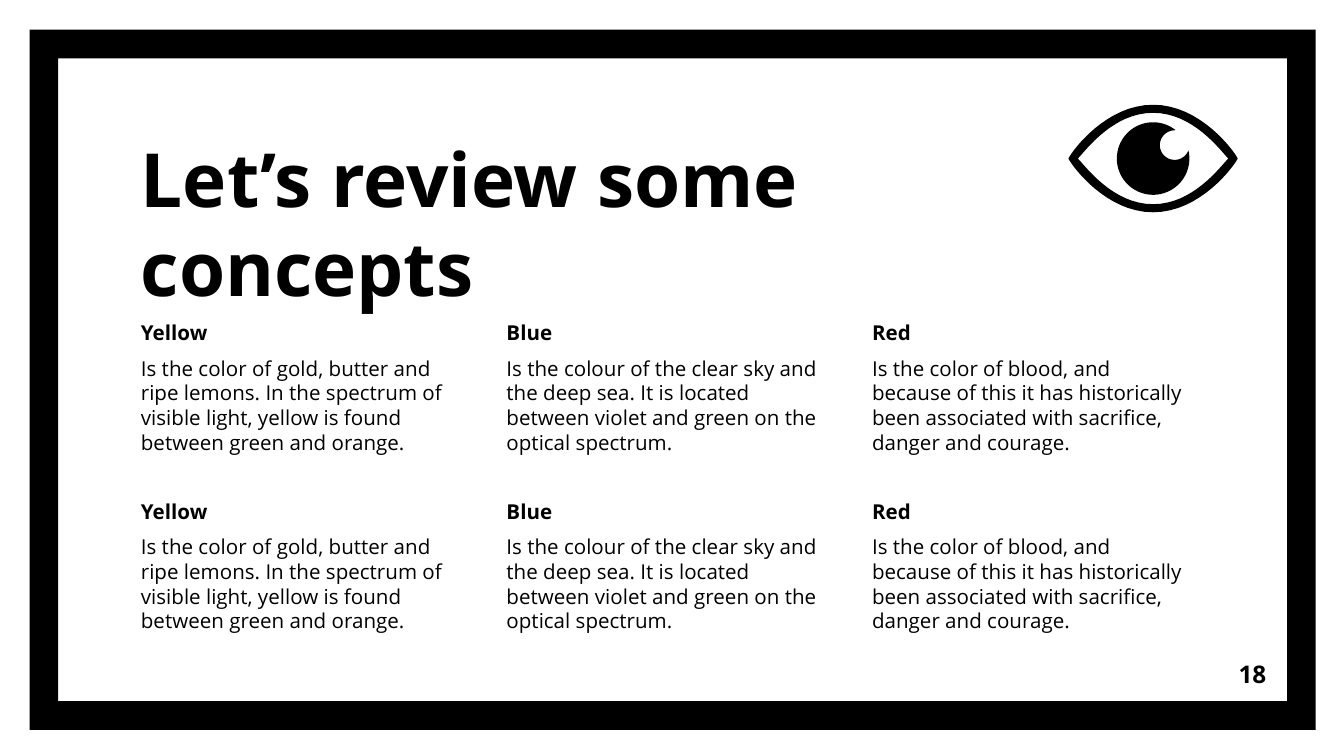
from math import cos, radians, sin

from pptx import Presentation
from pptx.dml.color import RGBColor
from pptx.enum.shapes import MSO_SHAPE
from pptx.enum.text import MSO_ANCHOR, PP_ALIGN
from pptx.util import Inches, Pt


def color(code):
    return RGBColor.from_string(code)


def write(para, text, size=11, bold=False, ink="000000", font="Open Sans",
          align=PP_ALIGN.LEFT, before=0):
    para.alignment = align
    para.space_before = Pt(before)
    run = para.add_run()
    run.text = text
    run.font.name = font
    run.font.size = Pt(size)
    run.font.bold = bold
    run.font.color.rgb = color(ink)


def arc(x, y, radius, start, end, steps):
    turns = [radians(start + (end - start) * i / steps)
             for i in range(steps + 1)]
    return [(x + radius * cos(t), y + radius * sin(t)) for t in turns]


def bend(a, b, c, d, steps=16):
    curve = []
    for i in range(steps + 1):
        t = i / steps
        s = 1 - t
        curve.append(tuple(
            s**3 * p + 3 * s * s * t * q + 3 * s * t * t * u + t**3 * v
            for p, q, u, v in zip(a, b, c, d)))
    return curve


def mirror(x, y, curve):
    half = curve + [(dx, -dy) for dx, dy in curve[-2::-1]]
    full = half + [(-dx, dy) for dx, dy in half[-2:0:-1]]
    return [(x + dx, y - dy) for dx, dy in full]


class Page:
    def __init__(self, slide, ink="000000"):
        self.shapes = slide.shapes
        self.ink = ink

    def paint(self, shape):
        shape.shadow.inherit = False
        shape.fill.solid()
        shape.fill.fore_color.rgb = color(self.ink)
        shape.line.fill.background()

    def frame(self, left, top, width, height, edge):
        shape = self.shapes.add_shape(
            MSO_SHAPE.FRAME, Inches(left), Inches(top),
            Inches(width), Inches(height))
        shape.adjustments[0] = edge
        self.paint(shape)

    def text(self, left, top, width, height, parts, anchor=MSO_ANCHOR.TOP):
        box = self.shapes.add_textbox(
            Inches(left), Inches(top), Inches(width), Inches(height))
        frame = box.text_frame
        frame.word_wrap = True
        frame.vertical_anchor = anchor
        frame.margin_left = frame.margin_right = Inches(0.1)
        frame.margin_top = frame.margin_bottom = Inches(0.1)
        for i, (words, style) in enumerate(parts):
            para = frame.add_paragraph() if i else frame.paragraphs[0]
            write(para, words, ink=self.ink, **style)

    def outline(self, *loops):
        pen = None
        for loop in loops:
            first, *rest = [(Inches(x), Inches(y)) for x, y in loop]
            if pen is None:
                pen = self.shapes.build_freeform(*first)
            else:
                pen.move_to(*first)
            pen.add_line_segments(rest, close=True)
        self.paint(pen.convert_to_shape())

    def eye(self, x, y):
        lid = bend((0, 0.4), (0.35, 0.4), (0.6, 0.06), (0.63, 0))
        white = bend((0, 0.34), (0.3, 0.34), (0.5, 0.06), (0.56, 0))
        self.outline(mirror(x, y, lid), mirror(x, y, white)[::-1])
        ball = arc(x, y, 0.27, -52, -373, 60)
        glint = arc(x + 0.16, y - 0.1, 0.11, 25, 270, 30)
        self.outline(ball + glint)


def main():
    deck = Presentation()
    deck.slide_width = Inches(10)
    deck.slide_height = Inches(10 * 9 / 16)
    page = Page(deck.slides.add_slide(deck.slide_layouts[6]))

    page.frame(0.22, 0.22, 9.57, 5.21, 0.041)
    page.text(0.95, 0.93, 5.57, 1.49,
              [("Let’s review some concepts", dict(size=40, bold=True))],
              MSO_ANCHOR.BOTTOM)

    topics = [
        ("Yellow", "Is the color of gold, butter and ripe lemons. In the "
         "spectrum of visible light, yellow is found between green and "
         "orange."),
        ("Blue", "Is the colour of the clear sky and the deep sea. It is "
         "located between violet and green on the optical spectrum."),
        ("Red", "Is the color of blood, and because of this it has "
         "historically been associated with sacrifice, danger and courage."),
    ]
    for row in range(2):
        for col, (name, body) in enumerate(topics):
            page.text(0.95 + 2.72 * col, 2.28 + 1.33 * row, 2.59, 1.54,
                      [(name, dict(bold=True, before=6)),
                       (body, dict(before=6))])

    page.eye(8.58, 1.18)
    page.text(8.92, 4.8, 0.6, 0.43,
              [("18", dict(size=13, bold=True, align=PP_ALIGN.RIGHT))],
              MSO_ANCHOR.MIDDLE)
    deck.save("out.pptx")


if __name__ == "__main__":
    main()
